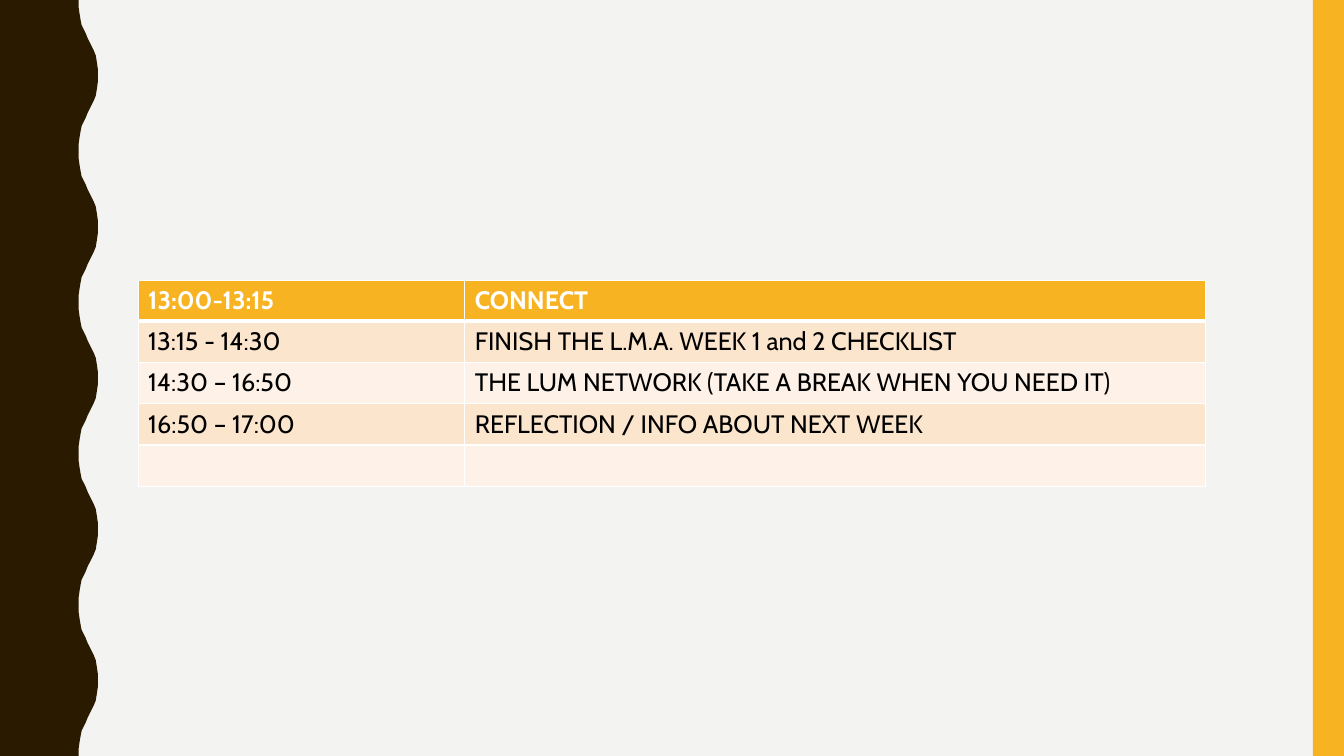
import pptx
import pptx.dml.color
import pptx.enum.shapes
import pptx.oxml
import pptx.oxml.ns
import pptx.util

Inches = pptx.util.Inches
RGBColor = pptx.dml.color.RGBColor

PAPER = RGBColor(0xF3, 0xF3, 0xF2)
BROWN = RGBColor(0x2A, 0x1A, 0x00)
GOLD = RGBColor(0xF8, 0xB3, 0x23)
PEACH = RGBColor(0xFC, 0xE5, 0xCD)
CREAM = RGBColor(0xFE, 0xF2, 0xE8)
WHITE = RGBColor(0xFF, 0xFF, 0xFF)
BLACK = RGBColor(0x00, 0x00, 0x00)

SLIDE_WIDTH, SLIDE_HEIGHT = 13.33, 7.5
WAVE_PERIOD = 1.5
# Trough to crest of one wave; the way back is its mirror
HALF_WAVE = [
    (0.78, 0), (0.78, 0.07), (0.79, 0.14), (0.8, 0.2), (0.81, 0.25),
    (0.83, 0.29), (0.85, 0.33), (0.87, 0.38), (0.89, 0.42), (0.91, 0.46),
    (0.93, 0.5), (0.95, 0.55), (0.96, 0.61), (0.97, 0.68), (0.97, 0.75),
]

COLUMN_WIDTHS = [3.24, 7.35]
HEADER_HEIGHT, ROW_HEIGHT = 0.4, 0.41
SCHEDULE = [
    ("13:00-13:15", "CONNECT"),
    ("13:15 - 14:30", "FINISH THE L.M.A. WEEK 1 and 2 CHECKLIST"),
    ("14:30 – 16:50", "THE LUM NETWORK (TAKE A BREAK WHEN YOU NEED IT)"),
    ("16:50 – 17:00", "REFLECTION / INFO ABOUT NEXT WEEK"),
    ("", ""),
]
HEADER_FONT = {"name": "Cabin", "size": pptx.util.Pt(18), "bold": True}
BODY_FONT = {**HEADER_FONT, "bold": False}


def paint(shape, color):
    shape.shadow.inherit = False
    shape.fill.solid()
    shape.fill.fore_color.rgb = color
    shape.line.fill.background()


def add_wavy_band(page):
    wave = HALF_WAVE + [(x, WAVE_PERIOD - y) for x, y in HALF_WAVE[-2::-1]]
    edge = [(x, y + number * WAVE_PERIOD)
            for number in range(round(SLIDE_HEIGHT / WAVE_PERIOD))
            for x, y in wave]
    corners = edge + [(0, SLIDE_HEIGHT)]
    outline = page.shapes.build_freeform(0, 0)
    outline.add_line_segments([(Inches(x), Inches(y)) for x, y in corners],
                              close=True)
    paint(outline.convert_to_shape(), BROWN)


def add_side_bar(page):
    width = 0.31
    bar = page.shapes.add_shape(
        pptx.enum.shapes.MSO_SHAPE.RECTANGLE,
        Inches(SLIDE_WIDTH - width), 0, Inches(width), Inches(SLIDE_HEIGHT))
    paint(bar, GOLD)


def add_borders(cell, widths):
    properties = cell._tc.get_or_add_tcPr()
    for side, points in widths.items():
        properties.append(pptx.oxml.parse_xml(
            f'<a:ln{side} {pptx.oxml.ns.nsdecls("a")} w="{pptx.util.Pt(points)}">'
            f'<a:solidFill><a:srgbClr val="{WHITE}"/></a:solidFill></a:ln{side}>'))


def fill_cell(cell, text, row):
    header = row == 0
    add_borders(cell, {"L": 1, "R": 1, "T": 3 if row == 1 else 1,
                       "B": 3 if header else 1})
    cell.fill.solid()
    cell.fill.fore_color.rgb = GOLD if header else PEACH if row % 2 else CREAM
    if not text:
        return
    span = cell.text_frame.paragraphs[0].add_run()
    span.text = text
    for name, value in (HEADER_FONT if header else BODY_FONT).items():
        setattr(span.font, name, value)
    span.font.color.rgb = WHITE if header else BLACK


def add_schedule(page):
    heights = [HEADER_HEIGHT] + [ROW_HEIGHT] * (len(SCHEDULE) - 1)
    table = page.shapes.add_table(
        len(SCHEDULE), len(COLUMN_WIDTHS), Inches(1.37), Inches(2.78),
        Inches(sum(COLUMN_WIDTHS)), Inches(sum(heights))).table
    for column, width in zip(table.columns, COLUMN_WIDTHS):
        column.width = Inches(width)
    for row, texts in enumerate(SCHEDULE):
        table.rows[row].height = Inches(heights[row])
        for column, text in enumerate(texts):
            fill_cell(table.cell(row, column), text, row)


def main():
    deck = pptx.Presentation()
    deck.slide_width = Inches(SLIDE_WIDTH)
    deck.slide_height = Inches(SLIDE_HEIGHT)
    page = deck.slides.add_slide(deck.slide_layouts[6])

    # Background and side decorations
    page.background.fill.solid()
    page.background.fill.fore_color.rgb = PAPER
    add_wavy_band(page)
    add_side_bar(page)

    # Timetable
    add_schedule(page)

    deck.save("out.pptx")


if __name__ == "__main__":
    main()
